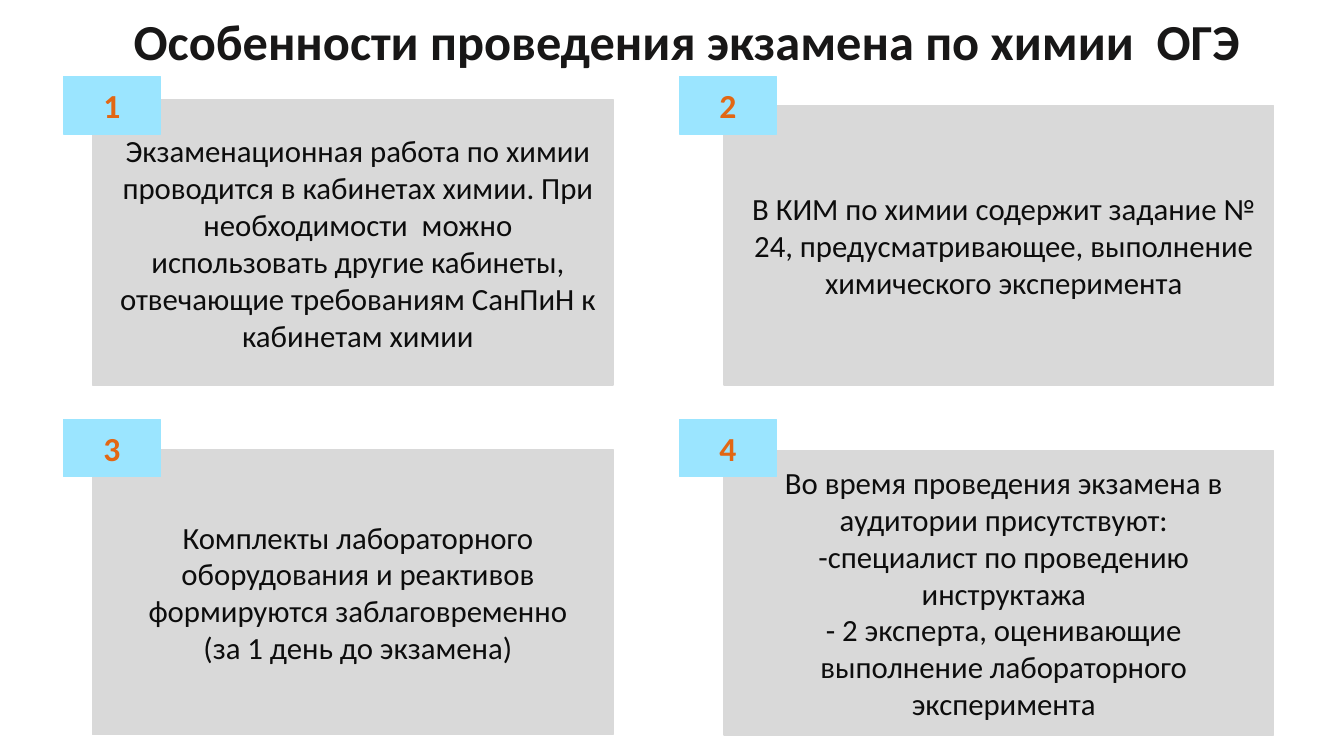
from pptx import Presentation
from pptx.dml.color import RGBColor
from pptx.enum.shapes import MSO_SHAPE as Shape
from pptx.enum.text import MSO_ANCHOR as Anchor, MSO_AUTO_SIZE as AutoSize, PP_ALIGN as Align
from pptx.util import Inches, Pt

COLORS = {"title": "181717", "text": "0D0D0D", "card": "D9D9D9",
          "badge": "9BE5FF", "number": "E26714"}
FONT = "Calibri"
TITLE = "Особенности проведения экзамена по химии  ОГЭ"

# Grid in inches: badges start the columns and rows, cards end them
BADGE_LEFT, BADGE_TOP = (0.63, 6.74), (0.76, 4.16)
BADGE_SIZE = (0.96, 0.57)
CARD_LEFT, CARD_RIGHT = (0.92, 7.18), (6.08, 12.63)
CARD_BOTTOM = (3.82, 7.29)

# Card top and paragraphs, in reading order
CARDS = [
    (0.99, ["Экзаменационная работа по химии проводится в кабинетах химии. "
            "При необходимости  можно использовать другие кабинеты, "
            "отвечающие требованиям СанПиН к кабинетам химии"]),
    (1.05, ["В КИМ по химии содержит задание № 24, предусматривающее, "
            "выполнение химического эксперимента"]),
    (4.46, ["Комплекты лабораторного оборудования и реактивов "
            "формируются заблаговременно",
            "(за 1 день до экзамена)"]),
    (4.47, ["Во время проведения экзамена в аудитории присутствуют:",
            "-специалист по проведению инструктажа",
            "- 2 эксперта, оценивающие выполнение лабораторного эксперимента"]),
]


def rgb(name):
    return RGBColor.from_string(COLORS[name])


def write(shape, lines, size, color, bold=False, anchor=Anchor.MIDDLE, indent=0):
    frame = shape.text_frame
    frame.word_wrap = True
    frame.auto_size = AutoSize.NONE
    frame.vertical_anchor = anchor
    frame.text = "\n".join(lines)
    for para in frame.paragraphs:
        para.alignment = Align.CENTER
        if indent:
            para._p.get_or_add_pPr().set("marL", str(Inches(indent)))
        for span in para.runs:
            font = span.font
            font.name, font.size, font.bold = FONT, Pt(size), bold
            font.color.rgb = rgb(color)


def add_box(page, left, top, width, height, color):
    box = page.shapes.add_shape(Shape.RECTANGLE, Inches(left), Inches(top),
                                Inches(width), Inches(height))
    box.shadow.inherit = False
    box.fill.solid()
    box.fill.fore_color.rgb = rgb(color)
    box.line.color.rgb = rgb(color)
    box.line.width = Pt(1)
    return box


def add_title(page):
    title = page.shapes.title
    title.left, title.top = Inches(0.53), Inches(0.05)
    title.width, title.height = Inches(12.57), Inches(0.71)
    write(title, [TITLE], 36, "title", bold=True, anchor=Anchor.TOP)


def add_card(page, index, top, lines):
    row, column = divmod(index, 2)
    left = CARD_LEFT[column]
    card = add_box(page, left, top, CARD_RIGHT[column] - left,
                   CARD_BOTTOM[row] - top, "card")
    write(card, lines, 22, "text", indent=0.1)
    badge = add_box(page, BADGE_LEFT[column], BADGE_TOP[row], *BADGE_SIZE, "badge")
    write(badge, [str(index + 1)], 24, "number", bold=True)


def main():
    deck = Presentation()
    deck.slide_width, deck.slide_height = Inches(13.33), Inches(7.5)
    page = deck.slides.add_slide(deck.slide_layouts[5])  # title only
    add_title(page)
    # Numbered cards, two per row
    for index, (top, lines) in enumerate(CARDS):
        add_card(page, index, top, lines)
    deck.save("out.pptx")


if __name__ == "__main__":
    main()
